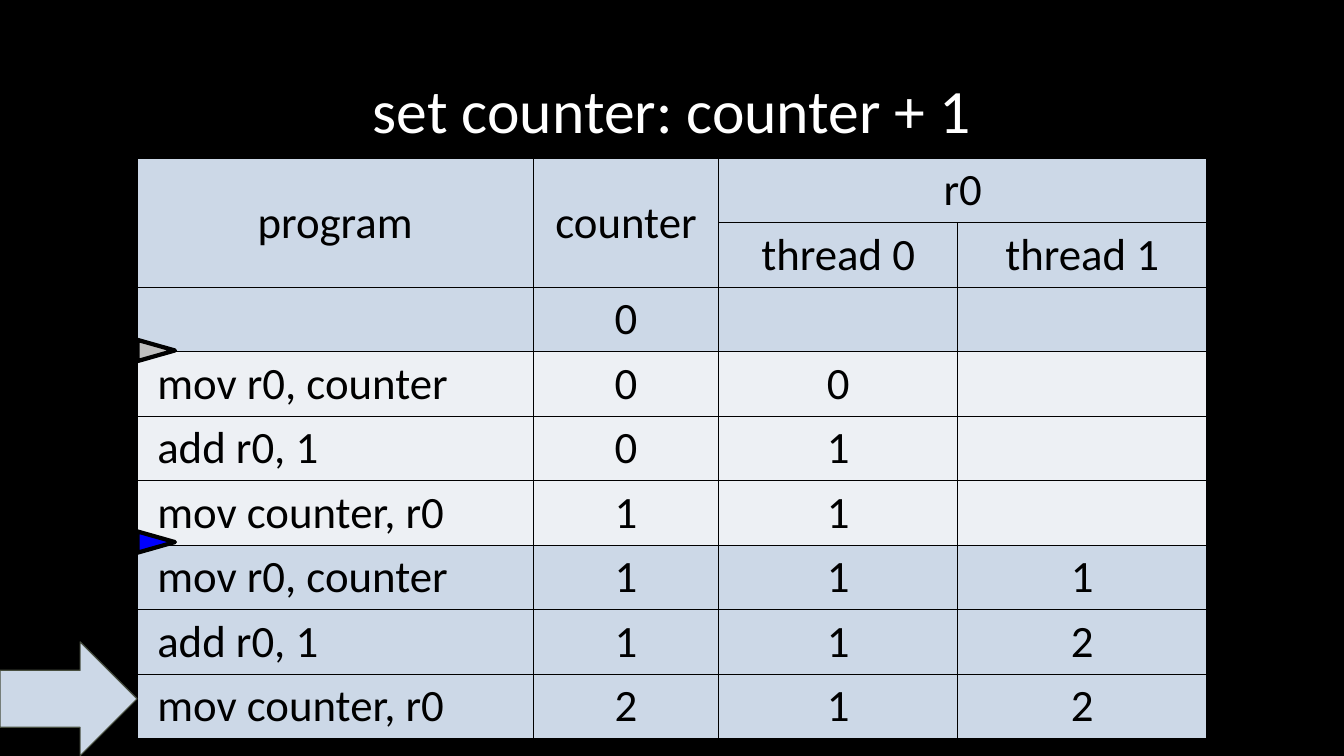
from dataclasses import dataclass
from lxml.etree import SubElement
from pptx import Presentation
from pptx.dml.color import RGBColor as RGB
from pptx.enum.shapes import MSO_SHAPE as Shape
from pptx.enum.text import MSO_ANCHOR as Anchor, PP_ALIGN as Align
from pptx.oxml.ns import qn
from pptx.util import Inches, Pt


@dataclass(frozen=True)
class Theme:
    font: str = "Calibri"
    title: int = 44
    body: int = 32
    back: str = "000000"
    light: str = "FFFFFF"
    dark: str = "000000"
    blue: str = "CCD8E7"
    pale: str = "EDF0F4"
    first: str = "BFBFBF"
    second: str = "0000FF"
    edge: str = "484F40"


THEME = Theme()
LEFT, TOP, ROW = 1.36, 1.57, 0.64
COLS = (3.93, 1.84, 2.37, 2.47)
HEAD = [("program", "counter", "r0", ""), ("", "", "thread 0", "thread 1")]
STEPS = [
    ("", "0", "", ""),
    ("mov r0, counter", "0", "0", ""),
    ("add r0, 1", "0", "1", ""),
    ("mov counter, r0", "1", "1", ""),
    ("mov r0, counter", "1", "1", "1"),
    ("add r0, 1", "1", "1", "2"),
    ("mov counter, r0", "2", "1", "2"),
]
PALE = range(3, 6)
MERGES = [((0, 0), (1, 0)), ((0, 1), (1, 1)), ((0, 2), (0, 3))]


def write(frame, text, size=THEME.body, color=THEME.dark, align=Align.CENTER, space=1.0):
    par = frame.paragraphs[0]
    par.alignment = align
    par.line_spacing = space
    run = par.add_run()
    run.text = text
    run.font.name = THEME.font
    run.font.size = Pt(size)
    run.font.color.rgb = RGB.from_string(color)


def paint(item, color):
    item.fill.solid()
    item.fill.fore_color.rgb = RGB.from_string(color)


def border(cell):
    props = cell._tc.get_or_add_tcPr()
    for place, side in enumerate(("lnL", "lnR", "lnT", "lnB")):
        line = SubElement(props, qn(f"a:{side}"), w=str(Pt(1)))
        fill = SubElement(line, qn("a:solidFill"))
        SubElement(fill, qn("a:srgbClr"), val=THEME.dark)
        props.insert(place, line)


def title(slide, text, wide, high):
    box = slide.shapes.add_textbox(
        int(wide * 0.07), int(high * 0.05), int(wide * 0.86), int(high * 0.2))
    frame = box.text_frame
    frame.word_wrap = True
    frame.vertical_anchor = Anchor.MIDDLE
    write(frame, text, size=THEME.title, color=THEME.light, space=0.9)


def trace(slide):
    rows = HEAD + STEPS
    frame = slide.shapes.add_table(
        len(rows), len(COLS), Inches(LEFT), Inches(TOP),
        Inches(sum(COLS)), Inches(ROW * len(rows)))
    table = frame.table
    for col, width in zip(table.columns, COLS):
        col.width = Inches(width)
    for start, end in MERGES:
        table.cell(*start).merge(table.cell(*end))
    for r, row in enumerate(rows):
        table.rows[r].height = Inches(ROW)
        for c, text in enumerate(row):
            cell = table.cell(r, c)
            paint(cell, THEME.pale if r in PALE else THEME.blue)
            border(cell)
            if cell.is_merge_origin:
                cell.vertical_anchor = Anchor.MIDDLE
            code = c == 0 and r >= len(HEAD)
            if code:
                cell.margin_left = Inches(0.2)
            if text:
                write(cell.text_frame, text, align=Align.LEFT if code else Align.CENTER)


def mark(slide, kind, mid, row, size, fill, edge, weight, turn=0):
    """Centre a shape at mid inches across and at a row of the table."""
    wide, high = size
    shape = slide.shapes.add_shape(
        kind, Inches(mid - wide / 2), Inches(TOP + ROW * row - high / 2),
        Inches(wide), Inches(high))
    shape.rotation = turn
    shape.shadow.inherit = False
    paint(shape, fill)
    shape.line.color.rgb = RGB.from_string(edge)
    shape.line.width = Pt(weight)


def main():
    deck = Presentation()
    deck.slide_width, deck.slide_height = Inches(13.33), Inches(7.5)
    slide = deck.slides.add_slide(deck.slide_layouts[6])
    paint(slide.background, THEME.back)
    title(slide, "set counter: counter + 1", deck.slide_width, deck.slide_height)
    trace(slide)
    for row, color in ((5.95, THEME.second), (2.98, THEME.first)):
        mark(slide, Shape.ISOSCELES_TRIANGLE, LEFT + 0.19, row, (0.21, 0.37),
             color, THEME.dark, 3, turn=90)
    mark(slide, Shape.RIGHT_ARROW, LEFT / 2, 8.38, (LEFT, 1.13),
         THEME.blue, THEME.edge, 0.85)
    deck.save("out.pptx")


if __name__ == "__main__":
    main()
